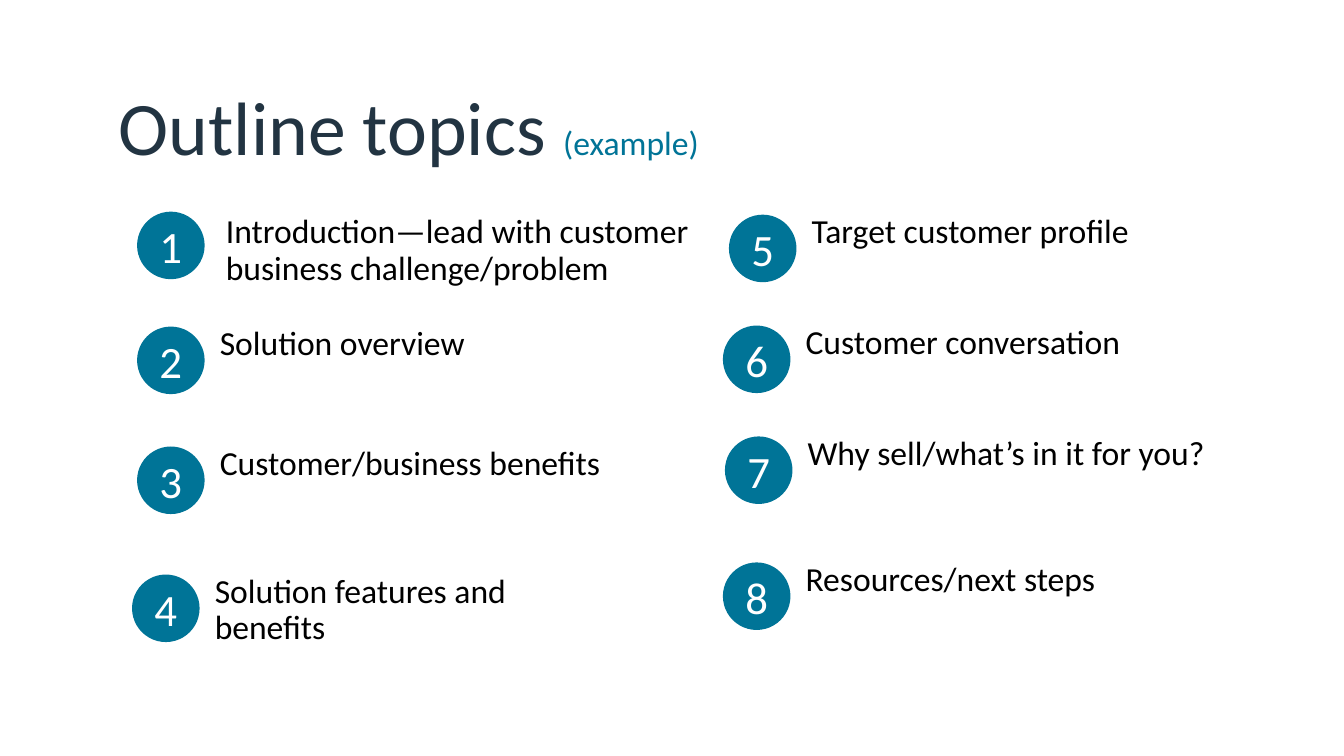
from dataclasses import dataclass

from pptx import Presentation
from pptx.dml.color import RGBColor
from pptx.enum.shapes import MSO_SHAPE as Shape
from pptx.enum.text import MSO_ANCHOR as Anchor, PP_ALIGN as Align
from pptx.util import Emu, Pt

# Content: title runs as (text, size name, colour name)
TITLE = [("Outline topics ", "title_size", "navy"), ("(example)", "body_size", "title_teal")]

# Topics: (text, badge left, badge top, text width, text nudge)
TOPICS = [
    ("Introduction—lead with customer business challenge/problem", 136, 210, 493, (6, 3)),
    ("Solution overview", 136, 324, 518, (0, 0)),
    ("Customer/business benefits", 136, 443, 382, (0, 0)),
    ("Solution features and benefits", 131, 570, 398, (0, 0)),
    ("Target customer profile", 723, 213, 488, (0, 0)),
    ("Customer conversation", 717, 323, 414, (0, 0)),
    ("Why sell/what’s in it for you?", 719, 433, 488, (0, 0)),
    ("Resources/next steps", 717, 558, 488, (0, 0)),
]


@dataclass(frozen=True)
class Theme:
    font: str = "Calibri"
    navy: str = "223442"
    title_teal: str = "017497"
    badge_teal: str = "007497"
    black: str = "000000"
    white: str = "FFFFFF"
    title_size: int = 54
    number_size: int = 32
    body_size: int = 24


THEME = Theme()

# Layout in px, 100 to the inch
EMU_PER_PX = 9144
SLIDE_SIZE = (1333, 750)
TITLE_BOX = (108, 57, 1150, 145)
BADGE_SIZE = 67
TEXT_OFFSET = 82
TEXT_HEIGHT = 98


def px(*lengths):
    return [Emu(length * EMU_PER_PX) for length in lengths]


def add_run(paragraph, text, size, color):
    run = paragraph.add_run()
    run.text = text
    run.font.name = THEME.font
    run.font.size = Pt(size)
    run.font.color.rgb = RGBColor.from_string(color)


def clear_margins(frame):
    frame.margin_left = frame.margin_top = frame.margin_right = frame.margin_bottom = 0


def add_text_frame(slide, box):
    frame = slide.shapes.add_textbox(*px(*box)).text_frame
    frame.word_wrap = True
    frame.paragraphs[0].line_spacing = 0.9
    return frame


def add_title(slide):
    frame = add_text_frame(slide, TITLE_BOX)
    frame.vertical_anchor = Anchor.MIDDLE
    for text, size, color in TITLE:
        add_run(frame.paragraphs[0], text, getattr(THEME, size), getattr(THEME, color))


def add_badge(slide, number, left, top):
    badge = slide.shapes.add_shape(Shape.OVAL, *px(left, top, BADGE_SIZE, BADGE_SIZE))
    badge.shadow.inherit = False
    badge.fill.solid()
    badge.fill.fore_color.rgb = RGBColor.from_string(THEME.badge_teal)
    badge.line.fill.background()
    frame = badge.text_frame
    clear_margins(frame)
    frame.vertical_anchor = Anchor.MIDDLE
    paragraph = frame.paragraphs[0]
    paragraph.alignment = Align.CENTER
    add_run(paragraph, str(number), THEME.number_size, THEME.white)


def add_topic(slide, text, left, top, width):
    frame = add_text_frame(slide, (left, top, width, TEXT_HEIGHT))
    clear_margins(frame)
    paragraph = frame.paragraphs[0]
    paragraph.space_after = Pt(10)
    add_run(paragraph, text, THEME.body_size, THEME.black)


def main():
    presentation = Presentation()
    presentation.slide_width, presentation.slide_height = px(*SLIDE_SIZE)
    slide = presentation.slides.add_slide(presentation.slide_layouts[6])

    add_title(slide)

    # Numbered topics, each text set beside its badge
    for number, (text, left, top, width, (right, down)) in enumerate(TOPICS, start=1):
        add_topic(slide, text, left + TEXT_OFFSET + right, top + down, width)
        add_badge(slide, number, left, top)

    presentation.save("out.pptx")


if __name__ == "__main__":
    main()
